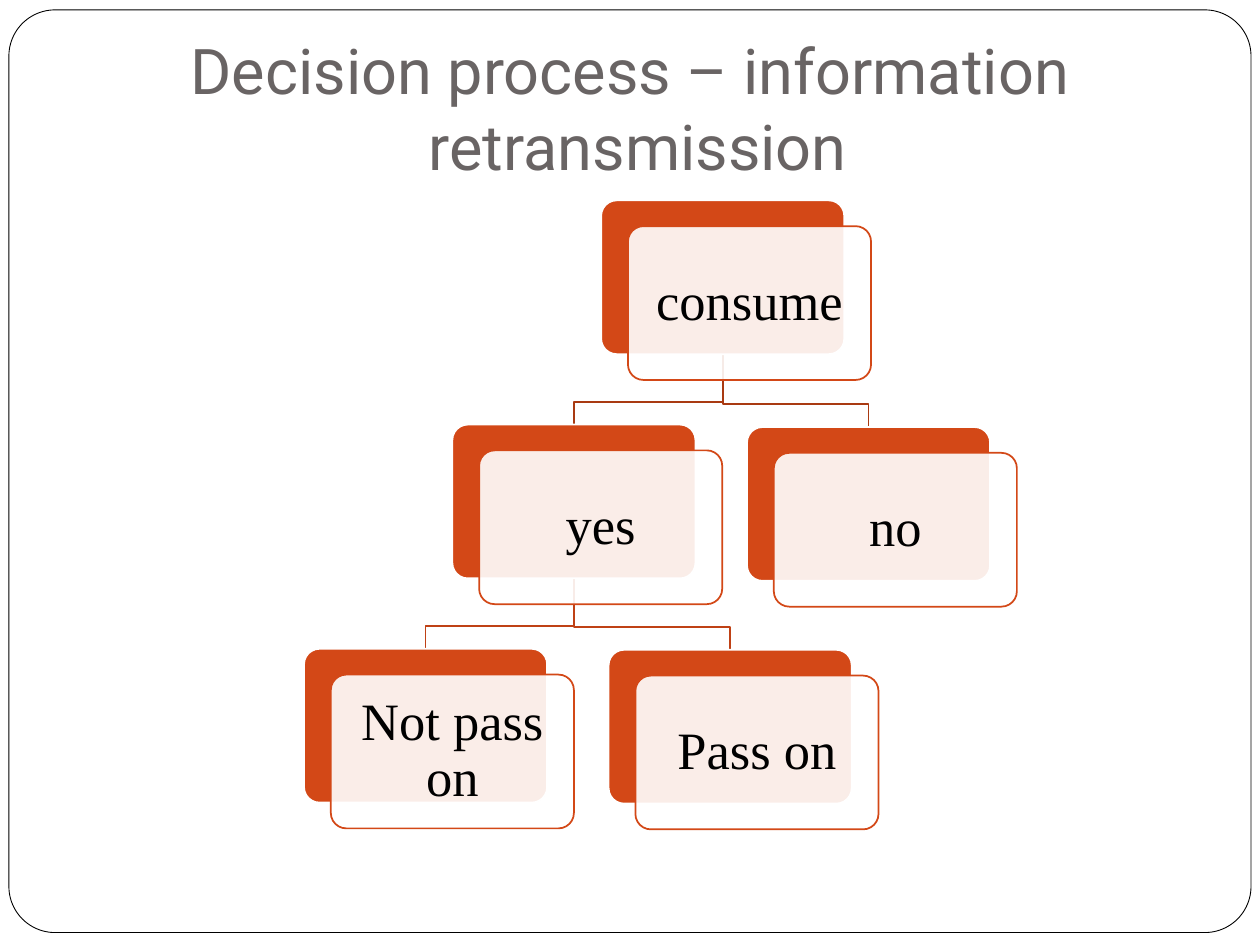
import pptx
import pptx.dml.color
import pptx.enum.shapes
import pptx.enum.text
import pptx.oxml
import pptx.oxml.ns
import pptx.util
from pptx.util import Cm, Pt

COLORS = {
    "paper": "FFFFFF",
    "ink": "000000",
    "title": "696464",
    "accent": "D34817",
    "upper_link": "A93A12",
    "lower_link": "BF4115",
}

CARD_W, CARD_H = 4.9, 3.1
OFFSET_X, OFFSET_Y = 0.54, 0.52
LINK_DROP = 0.46

# Left and top of each node, relative to the tree's box
NODES = {
    "consume": (5.99, 0),
    "yes": (2.99, 4.52),
    "Not pass on": (0, 9.04),
    "Pass on": (6.14, 9.06),
    "no": (8.93, 4.57),
}
LINKS = [
    ("consume", "no", "upper_link"),
    ("yes", "Pass on", "lower_link"),
    ("yes", "Not pass on", "lower_link"),
    ("consume", "yes", "upper_link"),
]


def rgb(name):
    return pptx.dml.color.RGBColor.from_string(COLORS[name])


def set_line(shape, color, width):
    shape.line.color.rgb = rgb(color)
    shape.line.width = Pt(width)


def add_round_box(slide, left, top, width, height, radius, fill, line, line_width=1):
    box = slide.shapes.add_shape(
        pptx.enum.shapes.MSO_SHAPE.ROUNDED_RECTANGLE,
        Cm(left), Cm(top), Cm(width), Cm(height))
    box.adjustments[0] = radius
    box.shadow.inherit = False
    box.fill.solid()
    box.fill.fore_color.rgb = rgb(fill)
    set_line(box, line, line_width)
    return box


def set_opacity(shape, percent):
    color = shape.fill._xPr.find(".//" + pptx.oxml.ns.qn("a:srgbClr"))
    alpha = pptx.oxml.parse_xml(
        f'<a:alpha {pptx.oxml.ns.nsdecls("a")} val="{percent * 1000}"/>')
    color.append(alpha)


def write_text(shape, text, font, size, color, anchor, margins):
    """Write one centred right-to-left paragraph; margins are left, top, right, bottom."""
    frame = shape.text_frame
    frame.word_wrap = True
    frame.vertical_anchor = anchor
    (frame.margin_left, frame.margin_top,
     frame.margin_right, frame.margin_bottom) = map(Cm, margins)
    paragraph = frame.paragraphs[0]
    paragraph.alignment = pptx.enum.text.PP_ALIGN.CENTER
    paragraph._p.get_or_add_pPr().set("rtl", "1")
    run = paragraph.add_run()
    run.text = text
    run.font.name = font
    run.font.size = Pt(size)
    run.font.color.rgb = rgb(color)
    return paragraph


def add_title(slide, left, top, width, height):
    title = slide.shapes.add_textbox(Cm(left), Cm(top), Cm(width), Cm(height))
    write_text(title, "Decision process – information retransmission ",
               "Roboto", 36, "title", pptx.enum.text.MSO_ANCHOR.BOTTOM,
               (0.25, 0.13, 0.25, 0.25))


def add_link(slide, left, top, parent, child, color):
    """Draw a bent line from the parent's bottom middle to the child's top middle."""
    start_x = left + NODES[parent][0] + CARD_W / 2
    start_y = top + NODES[parent][1] + CARD_H
    end_x = left + NODES[child][0] + CARD_W / 2
    end_y = top + NODES[child][1]
    bend_y = end_y - LINK_DROP
    builder = slide.shapes.build_freeform(Cm(start_x), Cm(start_y))
    builder.add_line_segments(
        [(Cm(x), Cm(y)) for x, y in
         ((start_x, bend_y), (end_x, bend_y), (end_x, end_y))], close=False)
    link = builder.convert_to_shape()
    link.shadow.inherit = False
    link.fill.background()
    set_line(link, color, 1)


def add_node(slide, left, top, label):
    add_round_box(slide, left, top, CARD_W, CARD_H, 0.1, "accent", "paper")
    card = add_round_box(slide, left + OFFSET_X, top + OFFSET_Y,
                         CARD_W, CARD_H, 0.1, "paper", "accent")
    set_opacity(card, 90)
    paragraph = write_text(card, label, "Times New Roman", 30, "ink",
                           pptx.enum.text.MSO_ANCHOR.MIDDLE, (0.3,) * 4)
    paragraph.line_spacing = 0.9


def add_decision_tree(slide, left, top):
    for parent, child, color in LINKS:
        add_link(slide, left, top, parent, child, color)
    for label, (x, y) in NODES.items():
        add_node(slide, left + x, top + y, label)


def main():
    deck = pptx.Presentation()
    deck.slide_width, deck.slide_height = Cm(25.4), Cm(19.05)
    slide = deck.slides.add_slide(deck.slide_layouts[6])
    add_round_box(slide, 0.18, 0.2, 25.04, 18.6, 0.05, "paper", "ink", 0.5)
    add_title(slide, 0.7, 0.76, 24, 3.18)
    add_decision_tree(slide, 6.13, 4.04)
    deck.save("out.pptx")


if __name__ == "__main__":
    main()
